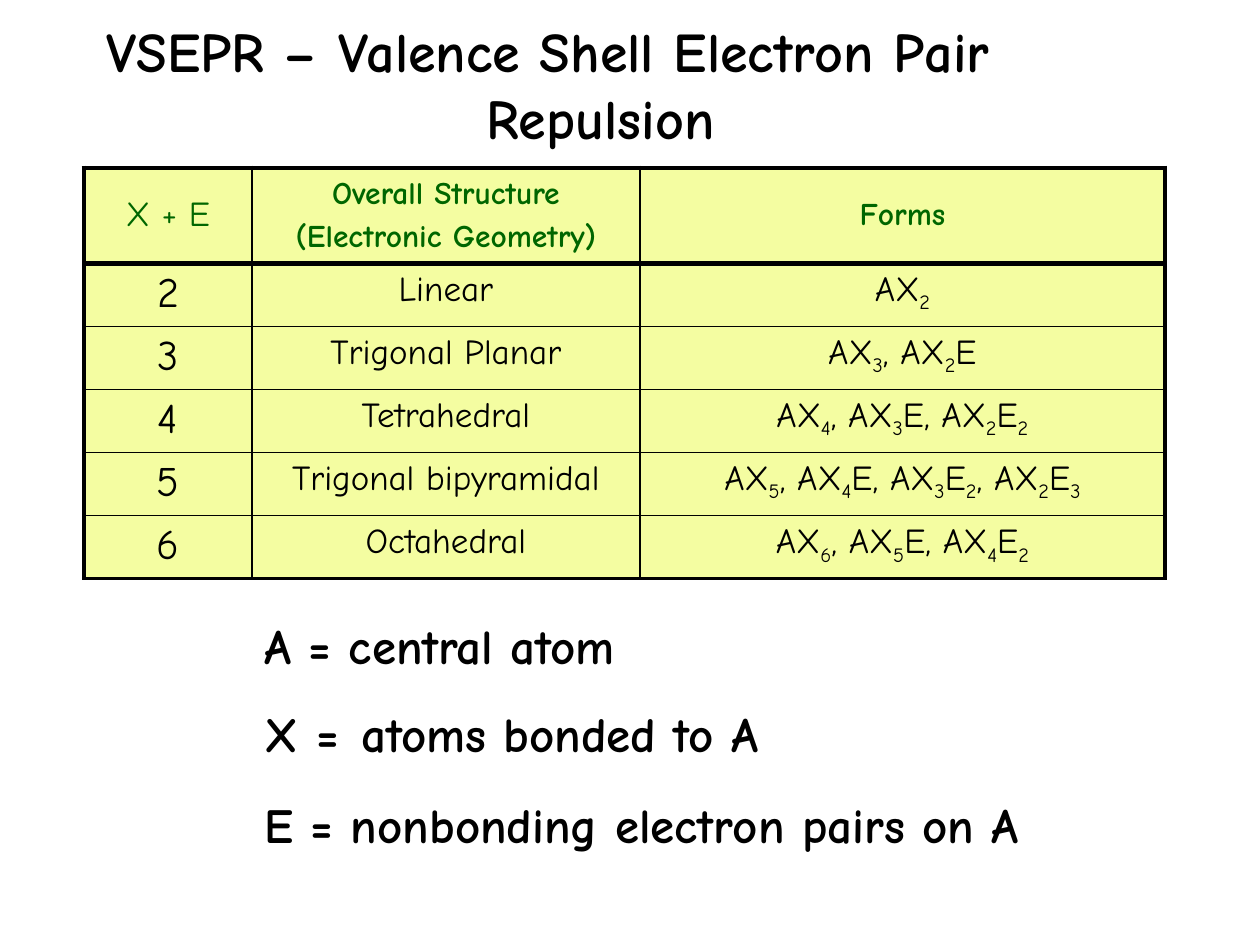
from itertools import groupby

from lxml import etree
from pptx import Presentation
from pptx.dml.color import RGBColor
from pptx.enum.text import MSO_ANCHOR, MSO_AUTO_SIZE, PP_ALIGN
from pptx.oxml.ns import qn
from pptx.util import Pt

EMU_PER_PX = 914400 / 126
BLACK = RGBColor(0x00, 0x00, 0x00)
GREEN = RGBColor(0x00, 0x66, 0x00)
YELLOW = RGBColor(0xF4, 0xFD, 0xA1)
CENTER, LEFT = PP_ALIGN.CENTER, PP_ALIGN.LEFT
TOP, MIDDLE = MSO_ANCHOR.TOP, MSO_ANCHOR.MIDDLE
GROW = MSO_AUTO_SIZE.SHAPE_TO_FIT_TEXT

THIN, MEDIUM, THICK = 1, 2.25, 3

HEADERS = [
    (["X + E"], 20, False),
    (["Overall Structure", "(Electronic Geometry)"], 18, True),
    (["Forms"], 18, True),
]
GEOMETRIES = [
    ("2", "Linear", "AX2"),
    ("3", "Trigonal Planar", "AX3, AX2E"),
    ("4", "Tetrahedral", "AX4, AX3E, AX2E2"),
    ("5", "Trigonal bipyramidal", "AX5, AX4E, AX3E2, AX2E3"),
    ("6", "Octahedral", "AX6, AX5E, AX4E2"),
]
COLUMN_WIDTHS = [168, 388, 525]
ROW_HEIGHTS = [92, 60, 62, 62, 62, 62]
LEGEND = [
    (609, 435, 72, [("A = central atom", 28)]),
    (683, 591, 88, [("X =", 28), (" ", 36), ("atoms bonded to A", 28)]),
    (788, 858, 72, [("E = nonbonding electron pairs on A", 28)]),
]


def px(length):
    return round(length * EMU_PER_PX)


def cell_borders(row, column):
    """Widths by side: thick around the header, medium around the body."""
    last_row, last_column = len(GEOMETRIES), len(HEADERS) - 1
    outer = THICK if row == 0 else MEDIUM
    return {
        "L": outer if column == 0 else THIN,
        "R": outer if column == last_column else THIN,
        "T": THICK if row <= 1 else THIN,
        "B": THICK if row == 0 else MEDIUM if row == last_row else THIN,
    }


class SlideWriter:
    font_name = "Comic Neue"

    def __init__(self, slide):
        self.slide = slide

    def run(self, paragraph, text, size, bold=False, color=BLACK, subscript=False):
        run = paragraph.add_run()
        run.text = text
        style = {"name": self.font_name, "size": Pt(size), "bold": bold}
        for attribute, value in style.items():
            setattr(run.font, attribute, value)
        run.font.color.rgb = color
        if subscript:
            run.font._element.set("baseline", "-25000")

    def formula(self, paragraph, text, size):
        """Write a formula with every number as a subscript."""
        for is_number, characters in groupby(text, str.isdigit):
            self.run(paragraph, "".join(characters), size, subscript=is_number)

    def text_box(self, left, top, width, height, **frame_style):
        box = self.slide.shapes.add_textbox(px(left), px(top), px(width), px(height))
        for attribute, value in frame_style.items():
            setattr(box.text_frame, attribute, value)
        return box.text_frame

    def title(self, first_line, second_line, indent):
        frame = self.text_box(94, 21, 1061, 126, word_wrap=True, vertical_anchor=MIDDLE)
        self.run(frame.paragraphs[0], first_line, 32, bold=True)
        paragraph = frame.add_paragraph()
        paragraph._p.get_or_add_pPr().set("marL", str(px(indent)))
        self.run(paragraph, second_line, 32, bold=True)

    def legend_line(self, top, width, height, pieces):
        frame = self.text_box(252, top, width, height, word_wrap=False, auto_size=GROW)
        paragraph = frame.paragraphs[0]
        paragraph.alignment = LEFT
        for text, size in pieces:
            self.run(paragraph, text, size, bold=True)

    def cell_frame(self, cell, borders, anchor):
        """Border and fill a cell."""
        properties = cell._tc.get_or_add_tcPr()
        for side, width in borders.items():
            line = etree.SubElement(properties, qn(f"a:ln{side}"), w=str(Pt(width)))
            fill = etree.SubElement(line, qn("a:solidFill"))
            etree.SubElement(fill, qn("a:srgbClr"), val=str(BLACK))
        cell.fill.solid()
        cell.fill.fore_color.rgb = YELLOW
        cell.vertical_anchor = anchor

    def geometry_table(self, left, top):
        table = self.slide.shapes.add_table(
            len(ROW_HEIGHTS), len(COLUMN_WIDTHS), px(left), px(top),
            px(sum(COLUMN_WIDTHS)), px(sum(ROW_HEIGHTS)),
        ).table
        table.first_row = table.horz_banding = False
        for column, width in zip(table.columns, COLUMN_WIDTHS):
            column.width = px(width)
        for row, height in zip(table.rows, ROW_HEIGHTS):
            row.height = px(height)
        for row in range(len(ROW_HEIGHTS)):
            for column in range(len(COLUMN_WIDTHS)):
                anchor = MIDDLE if row == 0 else TOP
                self.cell_frame(table.cell(row, column), cell_borders(row, column), anchor)

        for column, (lines, size, bold) in enumerate(HEADERS):
            frame = table.cell(0, column).text_frame
            for index, line in enumerate(lines):
                paragraph = frame.add_paragraph() if index else frame.paragraphs[0]
                paragraph.alignment = CENTER
                if index:
                    paragraph.space_before = Pt(4)
                self.run(paragraph, line, size, bold, GREEN)

        for row, geometry in enumerate(GEOMETRIES, start=1):
            count, structure, forms = (
                table.cell(row, column).text_frame.paragraphs[0]
                for column in range(len(geometry))
            )
            for paragraph in (count, structure, forms):
                paragraph.alignment = CENTER
            self.run(count, geometry[0], 24)
            self.run(structure, geometry[1], 20)
            self.formula(forms, geometry[2], 20)


def main():
    presentation = Presentation()
    presentation.slide_width, presentation.slide_height = px(1260), px(945)
    writer = SlideWriter(presentation.slides.add_slide(presentation.slide_layouts[6]))
    writer.title("VSEPR – Valence Shell Electron Pair", "Repulsion", indent=380)
    writer.geometry_table(84, 168)
    for line in LEGEND:
        writer.legend_line(*line)
    presentation.save("out.pptx")


if __name__ == "__main__":
    main()
